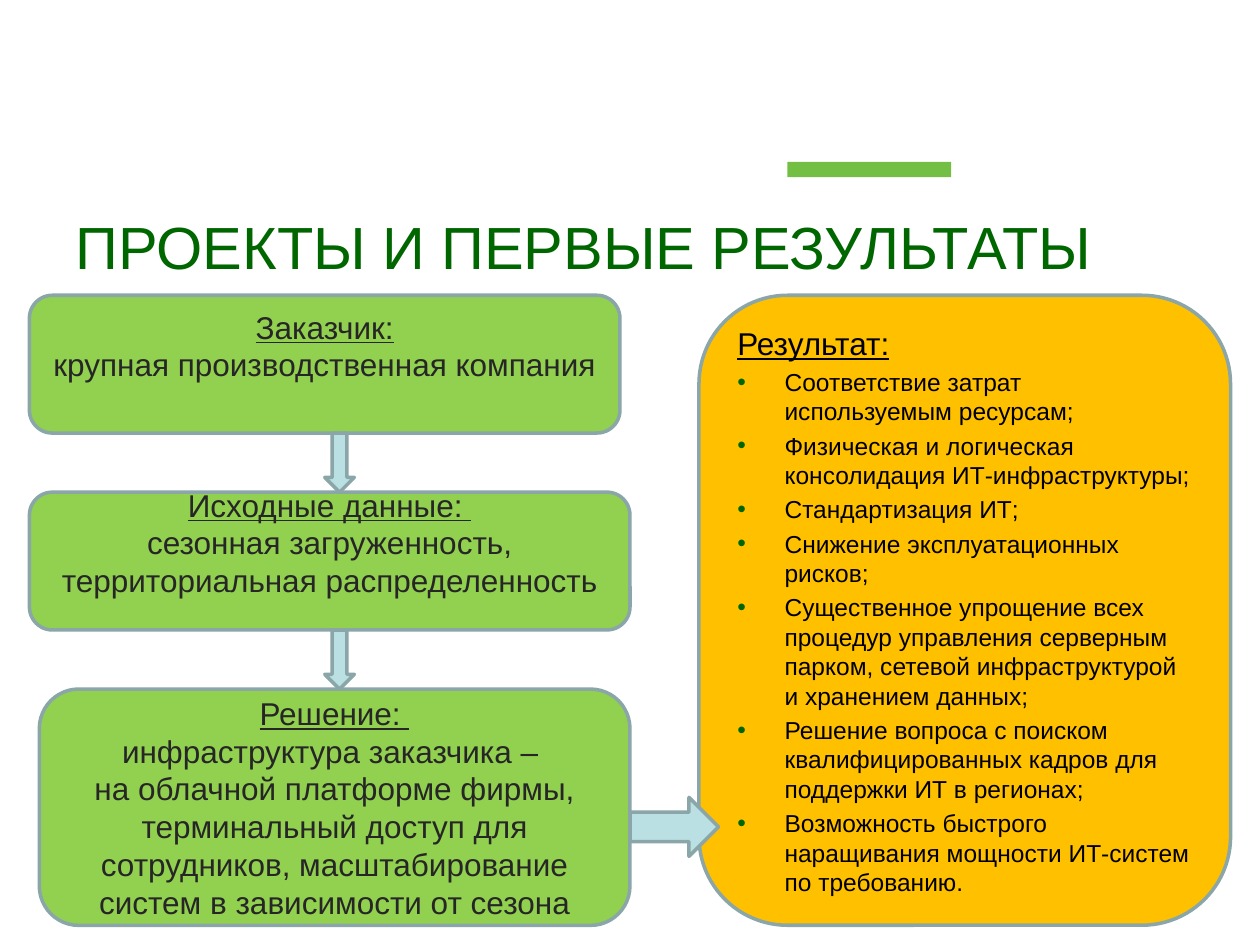
import pptx
import pptx.dml.color
import pptx.enum.shapes
import pptx.enum.text
import pptx.util
from lxml import etree

Pt = pptx.util.Pt
RGBColor = pptx.dml.color.RGBColor
SHAPE = pptx.enum.shapes.MSO_SHAPE
ALIGN = pptx.enum.text.PP_ALIGN
ANCHOR = pptx.enum.text.MSO_ANCHOR

DARK_GREEN = RGBColor(0x00, 0x66, 0x00)
BAR_GREEN = RGBColor(0x72, 0xBF, 0x44)
BOX_GREEN = RGBColor(0x92, 0xD0, 0x50)
AMBER = RGBColor(0xFF, 0xC0, 0x00)
PALE_BLUE = RGBColor(0xBB, 0xE0, 0xE3)
OUTLINE = RGBColor(0x8A, 0xA6, 0xA8)
CHARCOAL = RGBColor(0x26, 0x26, 0x26)
BLACK = RGBColor(0x00, 0x00, 0x00)

FONT = "Arial"
HANGING = 27
LINE_HEIGHT = 21.4

# Heading, body lines, place, and lines of free room under the text
STEPS = [
    ("Заказчик:", ["крупная производственная компания"],
     (16.8, 168.75, 337.5, 78.75), 1),
    ("Исходные данные: ", ["сезонная загруженность, территориальная распределенность"],
     (16.8, 281.25, 343.2, 78.75), 1),
    ("Решение: ",
     ["инфраструктура заказчика – ",
      "на облачной платформе фирмы, терминальный доступ для сотрудников, "
      "масштабирование систем в зависимости от сезона"],
     (22.5, 393.75, 337.5, 135), 0),
]

ARROWS = [
    (SHAPE.DOWN_ARROW, (185.6, 247.5, 16.9, 33.75)),
    (SHAPE.DOWN_ARROW, (185.6, 360, 16.9, 33.75)),
    (SHAPE.RIGHT_ARROW, (360, 455.6, 50.6, 33.75)),
]

RESULTS = [
    "Соответствие затрат используемым ресурсам;",
    "Физическая и логическая консолидация ИТ-инфраструктуры;",
    "Стандартизация ИТ;",
    "Снижение эксплуатационных рисков;",
    "Существенное упрощение всех процедур управления серверным парком, "
    "сетевой инфраструктурой и хранением данных;",
    "Решение вопроса с поиском квалифицированных кадров для поддержки ИТ в регионах;",
    "Возможность быстрого наращивания мощности ИТ-систем по требованию.",
]


def apply_format(target, values):
    for name, value in values.items():
        setattr(target, name, value)


def add_span(para, text, size, color, underline=False):
    span = para.add_run()
    span.text = text
    apply_format(span.font, {"name": FONT, "size": Pt(size), "underline": underline})
    span.font.color.rgb = color


def add_block(slide, kind, place, fill, outlined=True):
    block = slide.shapes.add_shape(kind, *map(Pt, place))
    block.shadow.inherit = False
    block.fill.solid()
    block.fill.fore_color.rgb = fill
    if outlined:
        block.line.color.rgb = OUTLINE
        block.line.width = Pt(2)
    else:
        block.line.fill.background()
    return block


def add_bullet(para, color):
    properties = para._p.get_or_add_pPr()
    properties.set("marL", str(Pt(HANGING)))
    properties.set("indent", str(-Pt(HANGING)))
    tag = "{http://schemas.openxmlformats.org/drawingml/2006/main}"
    bullet_color = etree.SubElement(properties, tag + "buClr")
    etree.SubElement(bullet_color, tag + "srgbClr", val=str(color))
    etree.SubElement(properties, tag + "buFont", typeface=FONT)
    etree.SubElement(properties, tag + "buChar", char="•")


def add_title(slide, text):
    title = slide.shapes.title
    apply_format(title, {"left": Pt(36), "top": Pt(112.5),
                         "width": Pt(648), "height": Pt(56.25)})
    apply_format(title.text_frame, {"vertical_anchor": ANCHOR.MIDDLE, "word_wrap": True})
    para = title.text_frame.paragraphs[0]
    para.alignment = ALIGN.LEFT
    add_span(para, text, 34, DARK_GREEN)


def add_step(slide, heading, lines, place, free_lines):
    box = add_block(slide, SHAPE.ROUNDED_RECTANGLE, place, BOX_GREEN)
    apply_format(box.text_frame, {
        "vertical_anchor": ANCHOR.MIDDLE, "word_wrap": True,
        "margin_bottom": Pt(3.6 + free_lines * LINE_HEIGHT)})
    para = box.text_frame.paragraphs[0]
    para.alignment = ALIGN.CENTER
    add_span(para, heading, 18, CHARCOAL, underline=True)
    for line in lines:
        para.add_line_break()
        add_span(para, line, 18, CHARCOAL)


def add_results(slide, heading, items):
    box = add_block(slide, SHAPE.ROUNDED_RECTANGLE, (399.4, 168.75, 303.8, 360), AMBER)
    frame = box.text_frame
    apply_format(frame, {"vertical_anchor": ANCHOR.MIDDLE, "word_wrap": True})
    para = frame.paragraphs[0]
    para.alignment = ALIGN.LEFT
    add_span(para, heading, 18, BLACK, underline=True)
    for item in items:
        para = frame.add_paragraph()
        add_bullet(para, DARK_GREEN)
        apply_format(para, {"alignment": ALIGN.LEFT, "space_before": Pt(2.8)})
        add_span(para, item, 14, BLACK)


def main():
    deck = pptx.Presentation()
    deck.slide_width, deck.slide_height = Pt(720), Pt(540)
    page = deck.slides.add_slide(deck.slide_layouts[5])

    # Accent bar and title
    add_block(page, SHAPE.RECTANGLE, (450, 92.5, 93.6, 8.8), BAR_GREEN, outlined=False)
    add_title(page, "ПРОЕКТЫ И ПЕРВЫЕ РЕЗУЛЬТАТЫ")

    # Project steps on the left, results on the right
    for step in STEPS:
        add_step(page, *step)
    add_results(page, "Результат:", RESULTS)

    # Arrows between the boxes
    for kind, place in ARROWS:
        add_block(page, kind, place, PALE_BLUE)

    deck.save("out.pptx")


if __name__ == "__main__":
    main()
